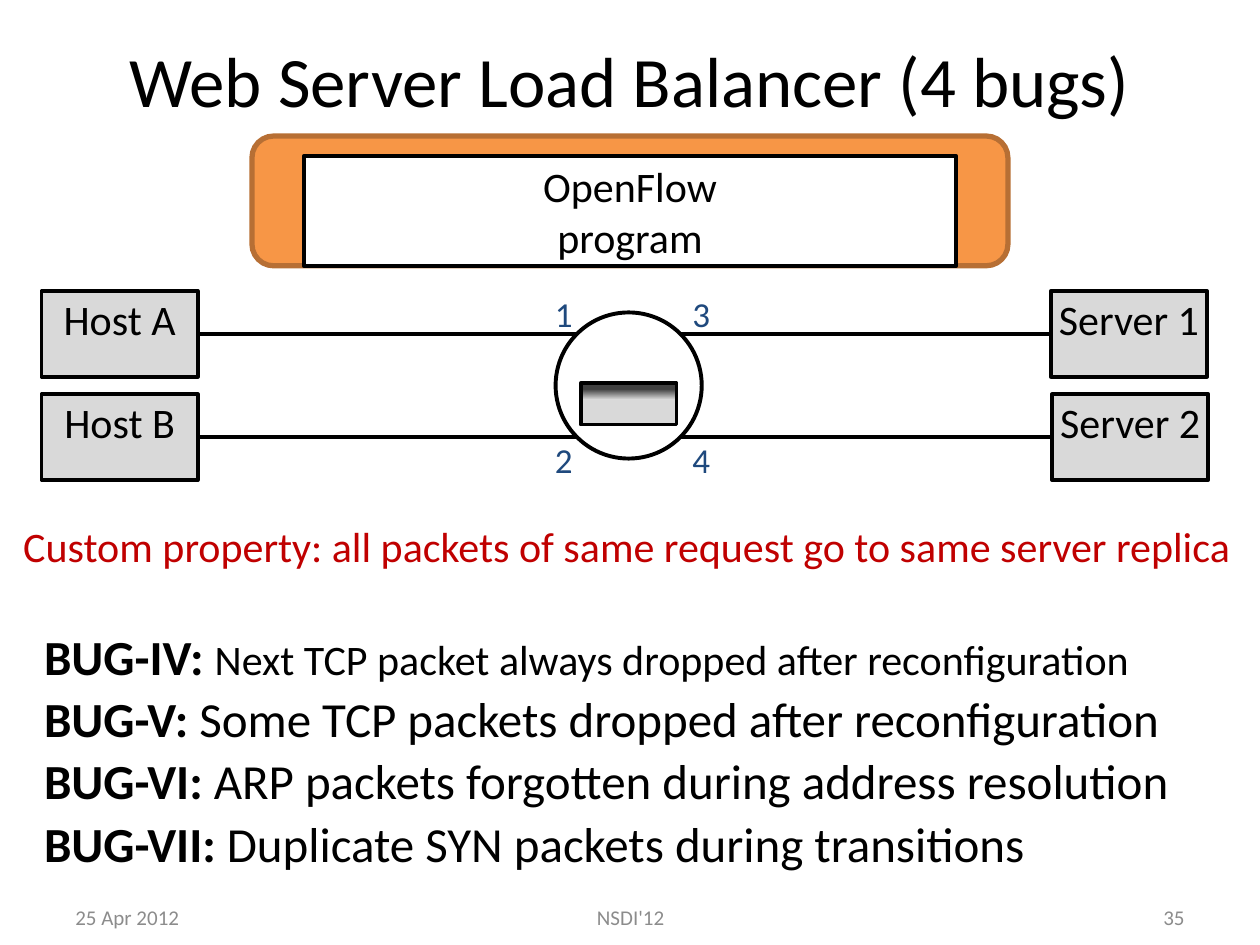
from typing import NamedTuple

from lxml import etree
from pptx import Presentation
from pptx.dml.color import RGBColor
from pptx.enum.shapes import MSO_CONNECTOR, MSO_SHAPE
from pptx.enum.text import MSO_ANCHOR, MSO_AUTO_SIZE, PP_ALIGN
from pptx.oxml.ns import qn
from pptx.util import Inches, Pt

LEFT, CENTER, RIGHT = PP_ALIGN.LEFT, PP_ALIGN.CENTER, PP_ALIGN.RIGHT
TOP, MIDDLE = MSO_ANCHOR.TOP, MSO_ANCHOR.MIDDLE
RECT, ROUNDED, OVAL = MSO_SHAPE.RECTANGLE, MSO_SHAPE.ROUNDED_RECTANGLE, MSO_SHAPE.OVAL
FONT = "Calibri"
BLACK, WHITE, GREY, DARK_GREY = "000000", "FFFFFF", "D9D9D9", "404040"
ORANGE, BROWN, BLUE, RED, FOOTER_GREY = "F79646", "B76F34", "1F497D", "C00000", "8C8C8C"


class Box(NamedTuple):
    left: float
    top: float
    width: float
    height: float

    def lengths(self):
        return [Inches(value) for value in self]


class Node(NamedTuple):
    name: str
    left: float
    top: float


class Label(NamedTuple):
    text: str
    box: Box
    align: PP_ALIGN = CENTER


class Bug(NamedTuple):
    number: str
    description: str
    size: float = 28


def rgb(color: str) -> RGBColor:
    return RGBColor.from_string(color)


def style_run(run, size: float, color: str = BLACK, bold: bool = False) -> None:
    run.font.name = FONT
    run.font.size = Pt(size)
    run.font.bold = bold
    run.font.color.rgb = rgb(color)


def set_text(frame, text: str, size: float, color: str = BLACK, align=CENTER,
             anchor=TOP, insets: tuple[float, float] = (0.1, 0.05)) -> None:
    frame.margin_left = frame.margin_right = Inches(insets[0])
    frame.margin_top = frame.margin_bottom = Inches(insets[1])
    frame.vertical_anchor = anchor
    paragraph = frame.paragraphs[0]
    paragraph.text = text
    paragraph.alignment = align
    for run in paragraph.runs:
        style_run(run, size, color)


def add_label(slide, label: Label, size: float, color: str, wrap: bool = False,
              anchor=TOP, insets: tuple[float, float] = (0.1, 0.05)) -> None:
    frame = slide.shapes.add_textbox(*label.box.lengths()).text_frame
    frame.word_wrap = wrap
    frame.auto_size = MSO_AUTO_SIZE.NONE if wrap else MSO_AUTO_SIZE.SHAPE_TO_FIT_TEXT
    set_text(frame, label.text, size, color, label.align, anchor, insets)


def add_block(slide, kind: MSO_SHAPE, box: Box, fill: str | None = None,
              line: str = BLACK, width: float = 2.25):
    block = slide.shapes.add_shape(kind, *box.lengths())
    block.shadow.inherit = False
    if fill:
        block.fill.solid()
        block.fill.fore_color.rgb = rgb(fill)
    else:
        block.fill.background()
    block.line.color.rgb = rgb(line)
    block.line.width = Pt(width)
    return block


def add_link(slide, start: float, end: float, y: float) -> None:
    link = slide.shapes.add_connector(
        MSO_CONNECTOR.STRAIGHT, Inches(start), Inches(y), Inches(end), Inches(y))
    link.line.color.rgb = rgb(BLACK)
    link.line.width = Pt(2.25)
    etree.SubElement(link._element.spPr, qn("a:effectLst"))


def add_gradient(block, stops: list[tuple[int, str]]) -> None:
    """Fill a block from top to bottom with stops given in percent."""
    properties = block._element.spPr
    properties.remove(properties.find(qn("a:noFill")))
    gradient = etree.Element(qn("a:gradFill"), rotWithShape="1")
    stop_list = etree.SubElement(gradient, qn("a:gsLst"))
    for percent, color in stops:
        stop = etree.SubElement(stop_list, qn("a:gs"), pos=str(percent * 1000))
        etree.SubElement(stop, qn("a:srgbClr"), val=color)
    etree.SubElement(gradient, qn("a:lin"), ang="5400000", scaled="0")
    properties.find(qn("a:prstGeom")).addnext(gradient)


def place(placeholder, box: Box) -> None:
    placeholder.left, placeholder.top, placeholder.width, placeholder.height = box.lengths()
    placeholder.text_frame.auto_size = MSO_AUTO_SIZE.NONE


def fill_bugs(placeholder, bugs: list[Bug]) -> None:
    frame = placeholder.text_frame
    frame.vertical_anchor = TOP
    frame.text = "\n".join(f"{bug.number}: " for bug in bugs)
    for paragraph, bug in zip(frame.paragraphs, bugs):
        paragraph.space_before = Pt(0)
        paragraph.space_after = Pt(2)
        style_run(paragraph.runs[0], 28, bold=True)
        description = paragraph.add_run()
        description.text = bug.description
        style_run(description, bug.size)
        properties = paragraph._p.get_or_add_pPr()
        properties.set("marL", "0")
        properties.set("indent", "0")
        etree.SubElement(properties, qn("a:buNone"))


def main() -> None:
    deck = Presentation()
    deck.slide_width, deck.slide_height = Inches(10), Inches(7.5)
    slide = deck.slides.add_slide(deck.slide_layouts[1])
    title, bug_list = slide.placeholders

    # Title
    place(title, Box(0.5, 0, 9, 1.25))
    set_text(title.text_frame, "Web Server Load Balancer (4 bugs)", 40.5, anchor=MIDDLE)

    # Controller
    add_block(slide, ROUNDED, Box(2, 1.08, 6, 1.03), ORANGE, BROWN, 3)
    program = add_block(slide, RECT, Box(2.41, 1.24, 5.18, 0.87), WHITE)
    set_text(program.text_frame, "OpenFlow\vprogram", 24, anchor=MIDDLE)

    # Hosts and servers, each linked to the switch
    node_width, node_height = 1.24, 0.68
    switch_left, switch_right = 4.58, 5.4
    nodes = [Node("Host A", 0.33, 2.31), Node("Host B", 0.33, 3.13),
             Node("Server 1", 8.34, 2.31), Node("Server 2", 8.35, 3.13)]
    for node in nodes:
        link_y = node.top + node_height / 2
        if node.left < switch_left:
            add_link(slide, node.left + node_width, switch_left, link_y)
        else:
            add_link(slide, switch_right, node.left, link_y)
        block = add_block(slide, RECT, Box(node.left, node.top, node_width, node_height), GREY)
        set_text(block.text_frame, node.name, 24, insets=(0.02, 0.02))

    # Switch with its flow table and port numbers
    add_block(slide, OVAL, Box(4.41, 2.48, 1.16, 1.16))
    flow_table = add_block(slide, RECT, Box(4.61, 3.04, 0.76, 0.33))
    add_gradient(flow_table, [(0, DARK_GREY), (15, DARK_GREY), (40, GREY), (100, GREY)])
    for index in range(4):
        column, row = divmod(index, 2)
        port = Label(str(index + 1), Box(4.37 + 1.09 * column, 2.3 + 1.16 * row, 0.21, 0.37))
        add_label(slide, port, 20, BLUE, insets=(0.03, 0.02))

    # Property and the bugs found
    custom_property = Label(
        "Custom property: all packets of same request go to same server replica",
        Box(0.04, 4.08, 9.87, 0.5))
    add_label(slide, custom_property, 24, RED)
    place(bug_list, Box(0.25, 4.92, 9.5, 2.08))
    fill_bugs(bug_list, [
        Bug("BUG-IV", "Next TCP packet always dropped after reconfiguration", 24),
        Bug("BUG-V", "Some TCP packets dropped after reconfiguration"),
        Bug("BUG-VI", "ARP packets forgotten during address resolution"),
        Bug("BUG-VII", "Duplicate SYN packets during transitions"),
    ])

    # Footer
    for footer in (Label("25 Apr 2012", Box(0.5, 7.08, 2.33, 0.4), LEFT),
                   Label("NSDI'12", Box(3.42, 7.08, 3.17, 0.4)),
                   Label("35", Box(7.17, 7.08, 2.33, 0.4), RIGHT)):
        add_label(slide, footer, 12, FOOTER_GREY, wrap=True, anchor=MIDDLE)

    deck.save("out.pptx")


if __name__ == "__main__":
    main()
